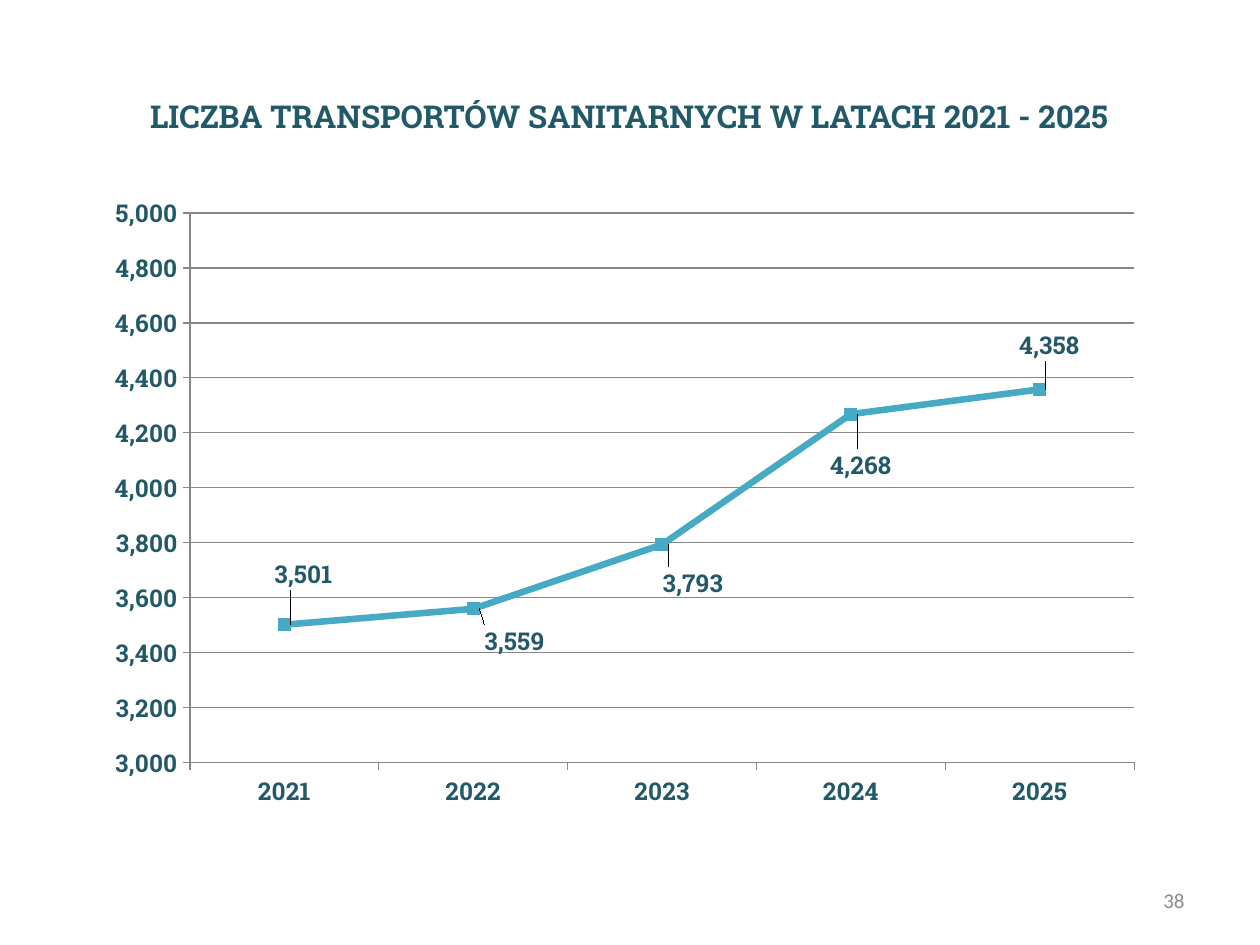
from lxml import etree
from pptx import Presentation
from pptx import util as u
from pptx.chart.data import CategoryChartData
from pptx.dml.color import RGBColor
from pptx.enum import chart as charts, text
from pptx.oxml.ns import qn

SLAB = "Roboto Slab"
TEAL, BLUE, GRAY, PALE = "215968", "46AAC4", "878787", "8B8B8B"
TRANSPORTS = {"2021": 3501, "2022": 3559, "2023": 3793, "2024": 4268, "2025": 4358}
# Shift of each value label from its place right of the point, in parts of the chart
LABEL_SHIFTS = [(-0.02, -0.08), (0, 0.05), (-0.01, 0.06), (-0.03, 0.08), (-0.03, -0.07)]


def color(value):
    return RGBColor.from_string(value)


def format_font(font, size, fill, name=SLAB, bold=True):
    font.name, font.size, font.bold = name, u.Pt(size), bold
    font.color.rgb = color(fill)


def format_line(line, fill, width):
    line.color.rgb = color(fill)
    line.width = u.Pt(width)


def place(shape, box):
    shape.left, shape.top, shape.width, shape.height = map(u.Inches, box)


def write(shape, words, align, inset=(0, 0), **font):
    frame = shape.text_frame
    frame.word_wrap = True
    frame.auto_size = text.MSO_AUTO_SIZE.NONE
    frame.vertical_anchor = text.MSO_ANCHOR.MIDDLE
    frame.margin_left = frame.margin_right = u.Inches(inset[0])
    frame.margin_top = frame.margin_bottom = u.Inches(inset[1])
    para = frame.paragraphs[0]
    para.alignment = align
    span = para.add_run()
    span.text = words
    format_font(span.font, **font)


def set_layout(parent, index, **values):
    """Give a chart part a manual layout, as parts of the chart's size."""
    for old in parent.findall(qn("c:layout")):
        parent.remove(old)
    layout = etree.Element(qn("c:layout"))
    manual = etree.SubElement(layout, qn("c:manualLayout"))
    for tag, value in values.items():
        etree.SubElement(manual, qn(f"c:{tag}")).set("val", str(value))
    parent.insert(index, layout)


def add_title(page, box):
    place(page.shapes.title, box)
    write(page.shapes.title, "LICZBA TRANSPORTÓW SANITARNYCH W LATACH 2021 - 2025",
          text.PP_ALIGN.CENTER, size=18, fill=TEAL)


def format_axes(chart):
    for axis in (chart.category_axis, chart.value_axis):
        format_font(axis.tick_labels.font, 14, TEAL)
        format_line(axis.format.line, GRAY, 0.75)
        axis.major_tick_mark = charts.XL_TICK_MARK.OUTSIDE
        axis.minor_tick_mark = charts.XL_TICK_MARK.NONE
    values = chart.value_axis
    values.minimum_scale, values.maximum_scale, values.major_unit = 3000, 5000, 200
    values.tick_labels.number_format = "#,##0"
    values.tick_labels.number_format_is_linked = False
    values.has_major_gridlines = True
    format_line(values.major_gridlines.format.line, GRAY, 0.75)


def format_series(series):
    series.smooth = False
    format_line(series.format.line, BLUE, 3.75)
    series.marker.style = charts.XL_MARKER_STYLE.SQUARE
    series.marker.size = 7
    series.marker.format.fill.solid()
    series.marker.format.fill.fore_color.rgb = color(BLUE)
    series.marker.format.line.fill.background()


def add_labels(series):
    labels = series.data_labels
    labels.show_value = True
    labels.number_format, labels.number_format_is_linked = "#,##0", False
    labels.position = charts.XL_LABEL_POSITION.RIGHT
    format_font(labels.font, 14, TEAL)
    for index in range(len(LABEL_SHIFTS)):
        label = series.points[index].data_label
        format_font(label.font, 14, TEAL)
        label.position = charts.XL_LABEL_POSITION.RIGHT
    for element, (x, y) in zip(series._element.iter(qn("c:dLbl")), LABEL_SHIFTS):
        set_layout(element, 1, x=x, y=y)


def add_line_chart(page, box):
    data = CategoryChartData(number_format="#,##0")
    data.categories = list(TRANSPORTS)
    data.add_series("Series 1", list(TRANSPORTS.values()))
    chart = page.shapes.add_chart(
        charts.XL_CHART_TYPE.LINE_MARKERS, *map(u.Inches, box), data).chart
    chart.has_legend = chart.has_title = False
    format_font(chart.font, 10, "000000", name="Arial", bold=False)
    plot = chart.plots[0]
    plot.vary_by_categories = False
    format_axes(chart)
    format_series(plot.series[0])
    add_labels(plot.series[0])
    area = chart._chartSpace.find(".//" + qn("c:plotArea"))
    set_layout(area, 0, layoutTarget="inner", xMode="edge", yMode="edge",
               x=0.09, y=0.044, w=0.89, h=0.865)


def add_page_number(page, box):
    write(page.shapes.add_textbox(*map(u.Inches, box)), "38", text.PP_ALIGN.RIGHT,
          inset=(0.1, 0.05), size=12, fill=PALE, name="Calibri", bold=False)


def main():
    deck = Presentation()
    deck.slide_width, deck.slide_height = u.Inches(10), u.Inches(7.5)
    page = deck.slides.add_slide(deck.slide_layouts.get_by_name("Title Only"))
    add_title(page, (0.5, 0.3, 8.99, 1.24))
    add_line_chart(page, (0.75, 1.47, 8.42, 5.04))
    add_page_number(page, (7.17, 6.95, 2.33, 0.39))
    deck.save("out.pptx")


if __name__ == "__main__":
    main()
